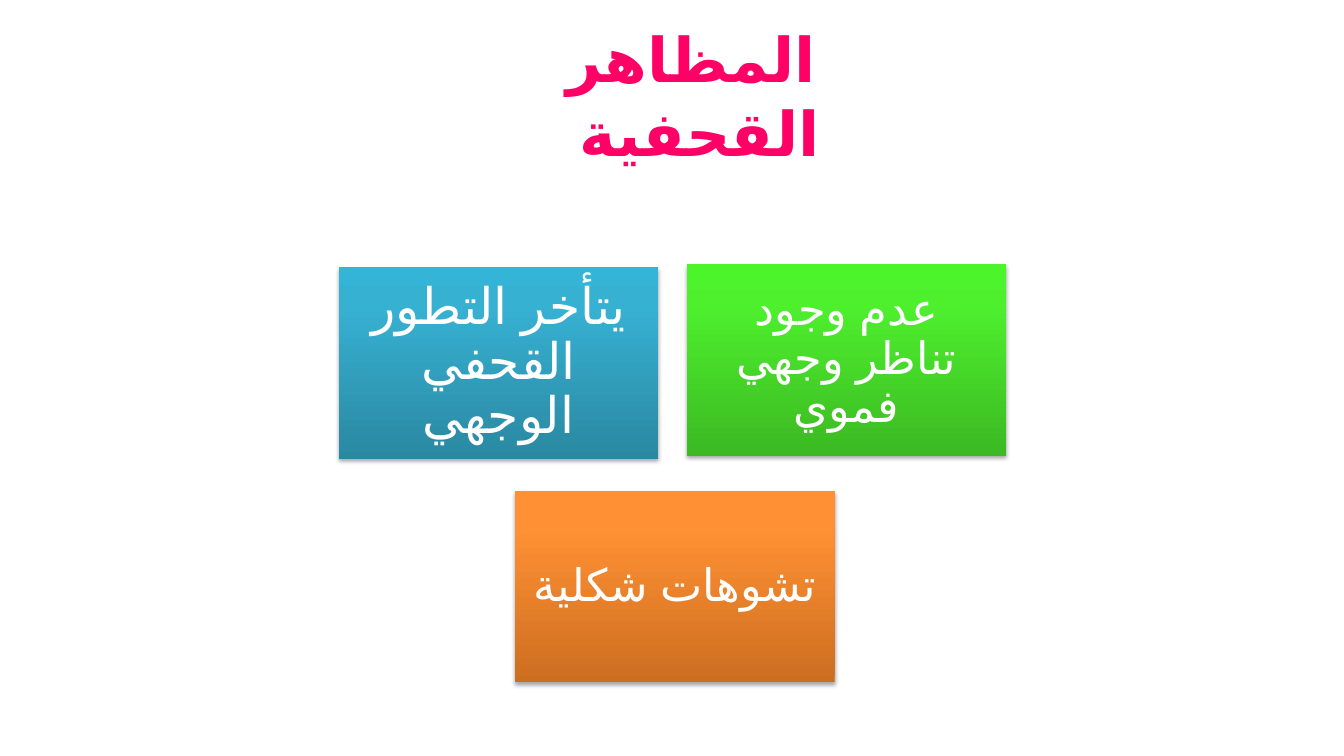
from dataclasses import dataclass

from pptx import Presentation, util as u
from pptx.dml.color import RGBColor
from pptx.enum import shapes, text
from pptx.oxml import parse_xml
from pptx.oxml.ns import nsdecls, qn


@dataclass(frozen=True)
class Theme:
    title_font: str = "Arial"
    card_font: str = "Calibri"
    arabic_font: str = "Arial"
    language: str = "ar-SA"
    title_color: str = "FF0066"
    card_text: str = "FFFFFF"
    # Gradient colours from bottom to top
    blue: tuple = ("2A88A2", "37B1D2", "34B4D6")
    green: tuple = ("3CB923", "4EF02E", "4CF52A")
    orange: tuple = ("CC6E20", "FF9034", "FF9136")
    title_size: int = 44
    large: int = 36
    normal: int = 32


THEME = Theme()
CARD_W, CARD_H = 3.17, 1.9


def write_rtl(sp, words, font, size, color, inset, bold=False):
    """Fill a shape with one centred right-to-left paragraph."""
    tf = sp.text_frame
    tf.word_wrap = True
    tf.vertical_anchor = text.MSO_ANCHOR.MIDDLE
    tf.margin_left = tf.margin_right = u.Inches(inset)
    tf.margin_top = tf.margin_bottom = u.Inches(inset)
    p = tf.paragraphs[0]
    p.text = words
    p.alignment = text.PP_ALIGN.CENTER
    p.font.name = font
    p.font.size = u.Pt(size)
    p.font.bold = bold
    p.font.color.rgb = RGBColor.from_string(color)
    # Right-to-left direction, Arabic typeface and language
    pPr = p._p.get_or_add_pPr()
    pPr.set("rtl", "1")
    pPr.find(qn("a:defRPr")).append(
        parse_xml(f'<a:cs {nsdecls("a")} typeface="{THEME.arabic_font}"/>'))
    p.runs[0]._r.get_or_add_rPr().set("lang", THEME.language)
    return p


def add_title(s, x, y, w, h):
    sp = s.shapes.add_textbox(*map(u.Inches, (x, y, w, h)))
    write_rtl(sp, "المظاهر القحفية ", THEME.title_font, THEME.title_size,
              THEME.title_color, 0.1, bold=True)


def style_card(sp, colors):
    """Vertical gradient, no outline, soft shadow below."""
    sp.line.fill.background()
    sp.shadow.inherit = False
    spPr = sp._element.spPr
    stops = "".join(
        f'<a:gs pos="{pos * 1000}"><a:srgbClr val="{color}"/></a:gs>'
        for pos, color in zip((0, 80, 100), colors))
    spPr.find(qn("a:ln")).addprevious(parse_xml(
        f'<a:gradFill {nsdecls("a")} rotWithShape="1"><a:gsLst>{stops}</a:gsLst>'
        '<a:lin ang="16200000" scaled="0"/></a:gradFill>'))
    spPr.find(qn("a:effectLst")).append(parse_xml(
        f'<a:outerShdw {nsdecls("a")} blurRad="{u.Pt(3.1)}" dist="{u.Pt(1.8)}" '
        'dir="5400000" rotWithShape="0"><a:srgbClr val="000000">'
        '<a:alpha val="35000"/></a:srgbClr></a:outerShdw>'))


def add_card(s, x, y, words, size, colors, inset):
    sp = s.shapes.add_shape(shapes.MSO_SHAPE.RECTANGLE,
                            *map(u.Inches, (x, y, CARD_W, CARD_H)))
    style_card(sp, colors)
    p = write_rtl(sp, words, THEME.card_font, size, THEME.card_text, inset)
    p.line_spacing = 0.9


def add_cards(s, x, y):
    """Two cards above, one below; offsets are from the region's corner."""
    cards = [
        (0, 0.03, "يتأخر التطور القحفي الوجهي", THEME.large, THEME.blue, 0.15),
        (3.45, 0, "عدم وجود تناظر وجهي فموي", THEME.normal, THEME.green, 0.13),
        (1.75, 2.25, "تشوهات شكلية ", THEME.normal, THEME.orange, 0.13),
    ]
    for dx, dy, *content in cards:
        add_card(s, x + dx, y + dy, *content)


def main():
    prs = Presentation()
    prs.slide_width, prs.slide_height = u.Inches(13.33), u.Inches(7.5)
    s = prs.slides.add_slide(prs.slide_layouts[6])
    add_title(s, 5.41, 0.52, 2.89, 0.84)
    add_cards(s, 3.36, 2.62)
    prs.save("out.pptx")


if __name__ == "__main__":
    main()
